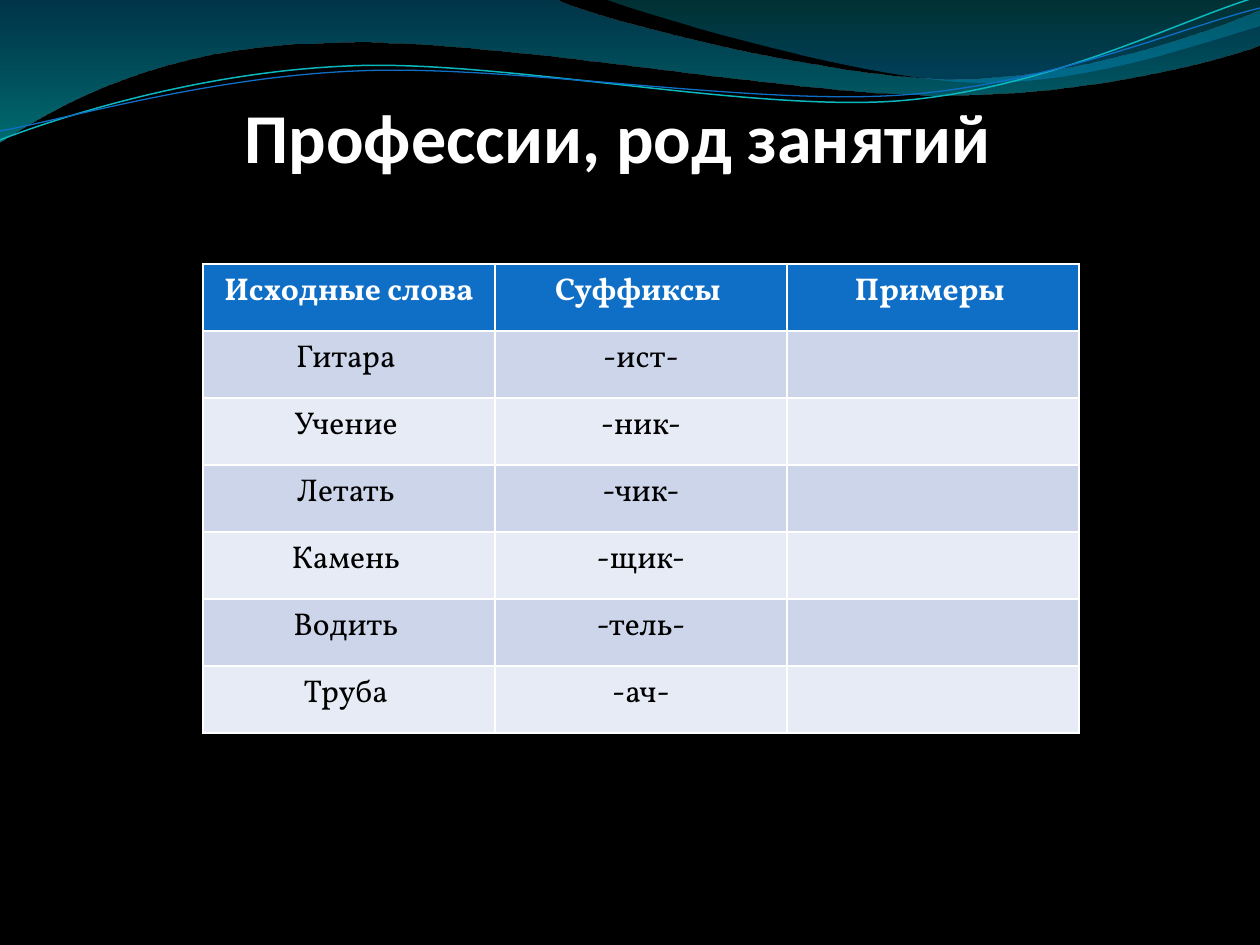
from math import cos, radians, sin

from lxml.etree import SubElement
from pptx import Presentation
from pptx.dml.color import RGBColor
from pptx.enum.text import MSO_ANCHOR, PP_ALIGN
from pptx.oxml.ns import qn
from pptx.util import Pt

PX = 914400 / 126
TILT = 2.7
WHITE = RGBColor(0xFF, 0xFF, 0xFF)
BLACK = RGBColor(0, 0, 0)
BLUE = RGBColor(0x0F, 0x6F, 0xC6)
CYAN = RGBColor(0x0A, 0xB8, 0xBF)
BAND_DARK = RGBColor(0xCC, 0xD5, 0xEA)
BAND_LIGHT = RGBColor(0xE7, 0xEB, 0xF5)
WAVE_TOP = RGBColor(0x00, 0x74, 0xA1)
WAVE_BOTTOM = RGBColor(0x00, 0xC6, 0xCF)
CREST_TOP = RGBColor(0x00, 0xA1, 0xA9)
CREST_BOTTOM = RGBColor(0x00, 0x8B, 0xBF)

WAVE = [[(0, 0)], [(554, -1)], [(600, 21), (837, 79), (955, 79)],
        [(1075, 79), (1207, 33), (1260, 11)], [(1261, 45)],
        [(1237, 55), (1096, 96), (940, 95)], [(784, 95), (481, 35), (324, 43)],
        [(163, 45), (58, 105), (-1, 142)]]
CREST = [[(604, -1)], [(641, 14), (859, 78), (969, 82)],
         [(1079, 87), (1211, 40), (1260, 26)], [(1260, 0)]]
CYAN_LINE = [[(0, 140)], [(60, 117), (199, 72), (349, 66)],
             [(498, 59), (747, 112), (898, 101)],
             [(1050, 89), (1182, 19), (1257, -3)]]
BLUE_LINE = [[(0, 131)], [(59, 121), (207, 77), (357, 71)],
             [(508, 64), (752, 106), (903, 95)],
             [(1053, 84), (1185, 26), (1260, 8)]]

ROWS = [
    ("Исходные слова", "Суффиксы ", "Примеры "),
    ("Гитара ", "-ист-", ""),
    ("Учение ", "-ник-", ""),
    ("Летать ", "-чик-", ""),
    ("Камень ", "-щик-", ""),
    ("Водить ", "-тель-", ""),
    ("Труба ", "-ач-", ""),
]


def px(n):
    return round(n * PX)


def turn(x, y, degrees):
    a = radians(degrees)
    return x * cos(a) - y * sin(a), x * sin(a) + y * cos(a)


def add_curve(s, box, segments, close, tilt=0):
    left, top = box[:2]
    points = [turn(px(left + x), px(top + y), tilt) for seg in segments for x, y in seg]
    builder = s.shapes.build_freeform(*points[0])
    builder.add_line_segments(points[1:], close=close)
    sp = builder.convert_to_shape()
    sp.shadow.inherit = False
    lines = iter(list(sp._element.iter(qn("a:lnTo"))))
    for seg in segments[1:]:
        parts = [next(lines) for _ in seg]
        if len(parts) == 3:
            bezier = parts[0].makeelement(qn("a:cubicBezTo"))
            parts[0].addprevious(bezier)
            for part in parts:
                bezier.append(part[0])
                part.getparent().remove(part)
    if tilt:
        cx, cy = turn(sp.left + sp.width / 2, sp.top + sp.height / 2, -tilt)
        sp.left, sp.top = round(cx - sp.width / 2), round(cy - sp.height / 2)
        sp.rotation = 360 - tilt
    return sp


def add_wave(s, box, segments, stops):
    sp = add_curve(s, box, segments, True)
    sp.line.fill.background()
    sp.fill.gradient()
    sp.fill.gradient_angle = 270
    stop_elements = sp._element.iter(qn("a:gs"))
    for stop, gs, (position, color, alpha) in zip(sp.fill.gradient_stops, stop_elements, stops):
        stop.position = position
        stop.color.rgb = color
        SubElement(gs[0], qn("a:alpha"), val=str(alpha * 1000))


def add_wave_line(s, box, segments, color, width):
    sp = add_curve(s, box, segments, False, TILT)
    sp.fill.background()
    sp.line.color.rgb = color
    sp.line.width = Pt(width)


def add_header_waves(s, box):
    add_wave(s, box, WAVE, [(0, WAVE_TOP, 45), (1, WAVE_BOTTOM, 55)])
    add_wave(s, box, CREST, [(0, CREST_TOP, 30), (0.8, CREST_BOTTOM, 45)])
    add_wave_line(s, box, CYAN_LINE, CYAN, 0.85)
    add_wave_line(s, box, BLUE_LINE, BLUE, 0.75)


def set_font(p, name, size, color, bold):
    p.alignment = PP_ALIGN.CENTER
    p.font.name = name
    p.font.size = Pt(size)
    p.font.color.rgb = color
    p.font.bold = bold


def add_title(s, box, text):
    title = s.shapes.title
    title.left, title.top, title.width, title.height = map(px, box)
    tf = title.text_frame
    tf.text = text
    tf.word_wrap = True
    tf.vertical_anchor = MSO_ANCHOR.BOTTOM
    tf.margin_left = tf.margin_top = tf.margin_bottom = 0
    tf.margin_right = px(2)
    set_font(tf.paragraphs[0], "Calibri", 40, WHITE, True)


def add_words_table(s, box, rows):
    table = s.shapes.add_table(len(rows), len(rows[0]), *map(px, box)).table
    for i, row in enumerate(rows):
        for j, text in enumerate(row):
            cell = table.cell(i, j)
            cell.fill.solid()
            cell.fill.fore_color.rgb = BLUE if i == 0 else BAND_DARK if i % 2 else BAND_LIGHT
            cell.text = text
            set_font(cell.text_frame.paragraphs[0], "Vollkorn", 18,
                     BLACK if i else WHITE, i == 0)


def main():
    prs = Presentation()
    prs.slide_width, prs.slide_height = px(1260), px(945)
    s = prs.slides.add_slide(prs.slide_layouts[0])
    subtitle = s.placeholders[1].element
    subtitle.getparent().remove(subtitle)
    s.background.fill.solid()
    s.background.fill.fore_color.rgb = BLACK
    add_header_waves(s, (0, 0, 1260, 142))
    add_title(s, (88, 118, 1077, 60), "Профессии, род занятий ")
    add_words_table(s, (203, 264, 876, 469), ROWS)
    prs.save("out.pptx")


if __name__ == "__main__":
    main()
